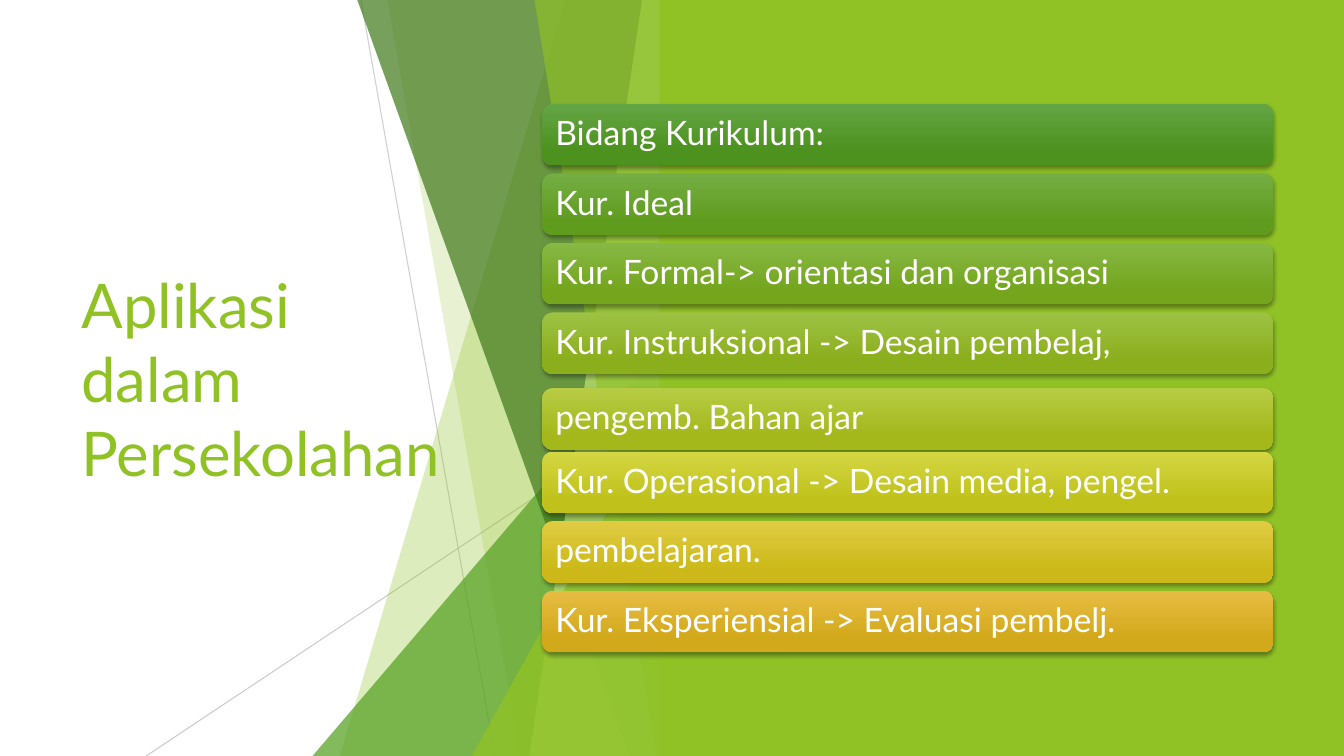
from dataclasses import dataclass

from lxml import etree
from pptx import Presentation
from pptx import util as u
from pptx.dml.color import RGBColor
from pptx.enum import shapes, text
from pptx.oxml import ns

FONT = "Lato"
COLORS = {
    "lime": "90C226",
    "green": "54A021",
    "forest": "3F7819",
    "pale": "C0E474",
    "gray": "BFBFBF",
    "white": "FFFFFF",
    "black": "000000",
}
PAGE_WIDTH, PAGE_HEIGHT = 13.33, 7.5
FACET_RIGHT = 6.66
FACET_TOP = -0.01
BAR_LEFT, BAR_TOP, BAR_WIDTH, BAR_HEIGHT, BAR_PITCH = 5.38, 1.03, 7.25, 0.61, 0.69


@dataclass(frozen=True)
class Ray:
    start: tuple[float, float]
    end: tuple[float, float]
    opacity: int


@dataclass(frozen=True)
class Ribbon:
    """Slanted band from the top of the page to its bottom."""
    top_left: float
    bottom_left: float
    color: str
    opacity: int


@dataclass(frozen=True)
class Wedge:
    """Right triangle standing on the bottom of the page."""
    left: float
    top: float
    color: str
    opacity: int


@dataclass(frozen=True)
class Bar:
    label: str
    light: str
    dark: str
    nudge: float = 0


RAYS = [
    Ray((3.58, 0), (4.91, 7.5), 75),
    Ray((6.66, 4.03), (1.45, 7.5), 80),
]
FACETS = [
    Ribbon(5.61, 3.37, "lime", 30),
    Ribbon(3.84, 5.16, "lime", 20),
    Wedge(3.1, 3.33, "green", 72),
    Ribbon(3.54, 6.24, "forest", 70),
    Ribbon(6.37, 5.25, "pale", 70),
    Ribbon(5.3, 6.51, "lime", 65),
    Wedge(4.68, 3.93, "lime", 80),
]
BARS = [
    Bar("Bidang Kurikulum:", "63A545", "4D921E"),
    Bar("Kur. Ideal", "74AE44", "5F9C1E"),
    Bar("Kur. Formal-> orientasi dan organisasi", "87B844", "74A51D"),
    Bar("Kur. Instruksional -> Desain pembelaj,", "9DC244", "8BAE1D"),
    Bar("pengemb. Bahan ajar", "B7CC44", "A4B81C", nudge=0.06),
    Bar("Kur. Operasional -> Desain media, pengel.", "D4D643", "C0C21B"),
    Bar("pembelajaran.", "E0CC43", "CCB919"),
    Bar("Kur. Eksperiensial -> Evaluasi pembelj.", "E7BC43", "D2A91B"),
]


def rgb(name: str) -> RGBColor:
    return RGBColor.from_string(COLORS[name])


def set_opacity(shape, percent: int) -> None:
    """Make the solid colour of a fill or line see-through."""
    color = next(shape._element.spPr.iter(ns.qn("a:srgbClr")))
    etree.SubElement(color, ns.qn("a:alpha"), val=str(percent * 1000))


def paint(shape, color: str, opacity: int = 100) -> None:
    shape.shadow.inherit = False
    shape.fill.solid()
    shape.fill.fore_color.rgb = rgb(color)
    shape.line.fill.background()
    if opacity < 100:
        set_opacity(shape, opacity)


def draw_ray(page, ray: Ray) -> None:
    points = [u.Inches(value) for value in (*ray.start, *ray.end)]
    line = page.shapes.add_connector(shapes.MSO_CONNECTOR.STRAIGHT, *points)
    line.line.color.rgb = rgb("gray")
    line.line.width = u.Pt(0.75)
    set_opacity(line, ray.opacity)
    etree.SubElement(line._element.spPr, ns.qn("a:effectLst"))


def draw_facet(page, facet: Ribbon | Wedge) -> None:
    if isinstance(facet, Wedge):
        shape = page.shapes.add_shape(
            shapes.MSO_SHAPE.ISOSCELES_TRIANGLE,
            u.Inches(facet.left), u.Inches(facet.top),
            u.Inches(FACET_RIGHT - facet.left), u.Inches(PAGE_HEIGHT - facet.top))
        shape.adjustments[0] = 1
    else:
        corners = [
            (u.Inches(x), u.Inches(y)) for x, y in (
                (facet.top_left, FACET_TOP), (FACET_RIGHT, FACET_TOP),
                (FACET_RIGHT, PAGE_HEIGHT), (facet.bottom_left, PAGE_HEIGHT))
        ]
        outline = page.shapes.build_freeform(*corners[0])
        outline.add_line_segments(corners[1:], close=True)
        shape = outline.convert_to_shape()
    paint(shape, facet.color, facet.opacity)


def write(shape, words: str, size: float, color: str) -> None:
    """Set one left-aligned, vertically centred paragraph."""
    frame = shape.text_frame
    frame.word_wrap = True
    frame.vertical_anchor = text.MSO_ANCHOR.MIDDLE
    para = frame.paragraphs[0]
    para.text = words
    para.alignment = text.PP_ALIGN.LEFT
    para.font.name = FONT
    para.font.size = u.Pt(size)
    para.font.color.rgb = rgb(color)


def add_soft_shadow(shape) -> None:
    shape.shadow.inherit = False
    effects = shape._element.spPr.find(ns.qn("a:effectLst"))
    shadow = etree.SubElement(
        effects, ns.qn("a:outerShdw"), blurRad=str(u.Pt(3)), dist=str(u.Pt(2)),
        dir="5400000", rotWithShape="0")
    color = etree.SubElement(shadow, ns.qn("a:srgbClr"), val=COLORS["black"])
    etree.SubElement(color, ns.qn("a:alpha"), val="35000")


def draw_bar(page, bar: Bar, row: int) -> None:
    shape = page.shapes.add_shape(
        shapes.MSO_SHAPE.ROUNDED_RECTANGLE, u.Inches(BAR_LEFT),
        u.Inches(BAR_TOP + row * BAR_PITCH + bar.nudge),
        u.Inches(BAR_WIDTH), u.Inches(BAR_HEIGHT))
    shape.fill.gradient()
    shape.fill.gradient_angle = 270
    stops = zip(shape.fill.gradient_stops, (0, 0.78), (bar.light, bar.dark))
    for stop, position, color in stops:
        stop.position = position
        stop.color.rgb = RGBColor.from_string(color)
    shape.line.fill.background()
    add_soft_shadow(shape)
    write(shape, bar.label, 24, "white")
    frame = shape.text_frame
    frame.margin_left = frame.margin_right = u.Inches(0.1)
    frame.margin_top = frame.margin_bottom = u.Inches(0.1)
    frame.paragraphs[0].line_spacing = 0.9


def main() -> None:
    deck = Presentation()
    deck.slide_width, deck.slide_height = u.Inches(PAGE_WIDTH), u.Inches(PAGE_HEIGHT)
    page = deck.slides.add_slide(deck.slide_layouts[6])

    title = page.shapes.add_textbox(
        u.Inches(0.71), u.Inches(1.51), u.Inches(3.88), u.Inches(4.48))
    write(title, "Aplikasi dalam Persekolahan", 44, "lime")

    for ray in RAYS:
        draw_ray(page, ray)
    for facet in FACETS:
        draw_facet(page, facet)
    panel = page.shapes.add_shape(
        shapes.MSO_SHAPE.RECTANGLE, u.Inches(6.54), 0,
        u.Inches(PAGE_WIDTH - 6.54), u.Inches(PAGE_HEIGHT))
    paint(panel, "lime")
    for row, bar in enumerate(BARS):
        draw_bar(page, bar, row)

    deck.save("out.pptx")


if __name__ == "__main__":
    main()
